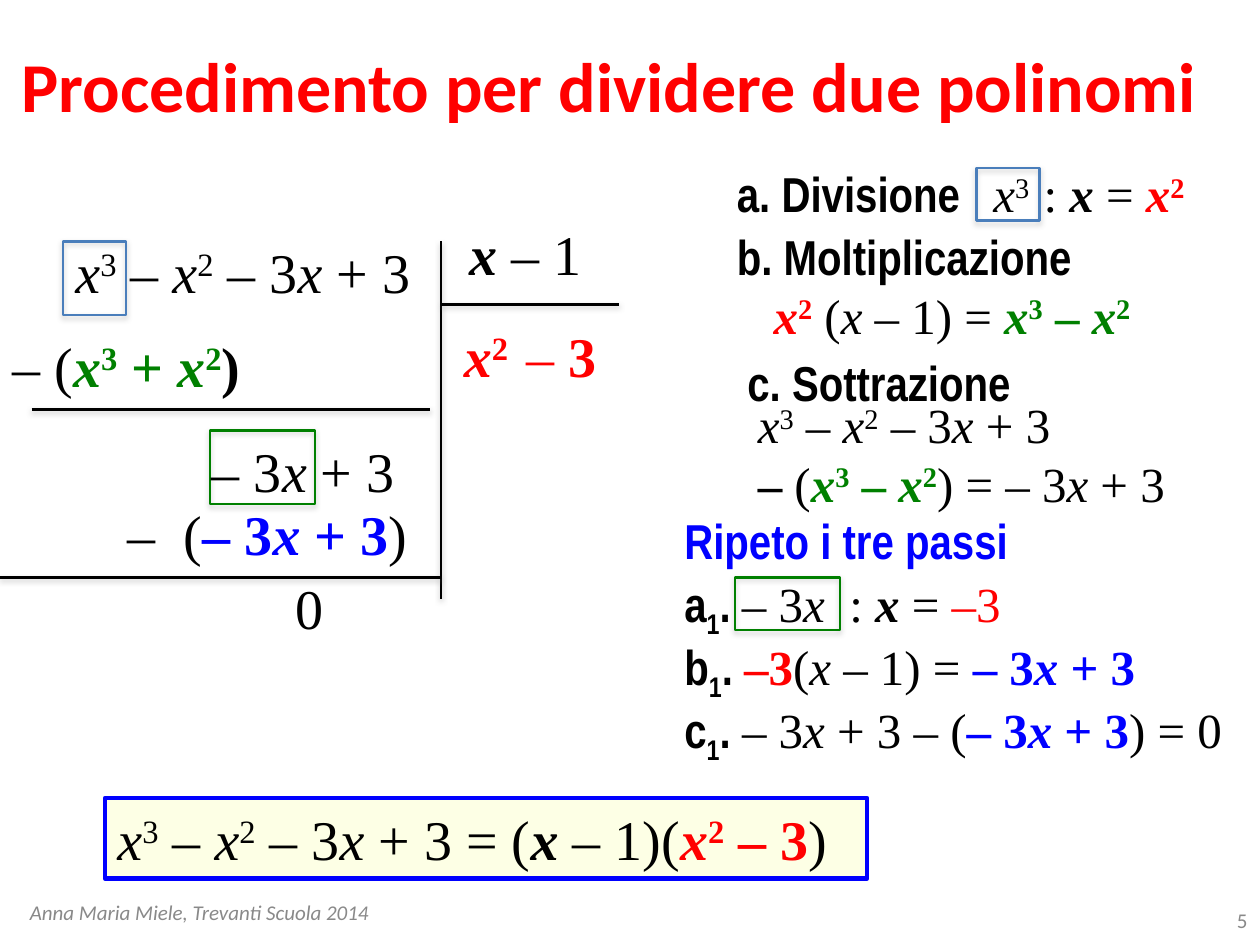
from lxml import etree
from pptx import Presentation
from pptx.dml.color import RGBColor
from pptx.enum.shapes import MSO_CONNECTOR, MSO_SHAPE
from pptx.enum.text import MSO_ANCHOR, PP_ALIGN
from pptx.util import Pt

RECT, LINE = MSO_SHAPE.RECTANGLE, MSO_CONNECTOR.STRAIGHT
TOP, MIDDLE = MSO_ANCHOR.TOP, MSO_ANCHOR.MIDDLE
LEFT, CENTER, RIGHT = PP_ALIGN.LEFT, PP_ALIGN.CENTER, PP_ALIGN.RIGHT
NS = "http://schemas.openxmlformats.org/drawingml/2006/main"
COLORS = {"R": "FF0000", "G": "008000", "B": "0000FF"}
rgb = RGBColor.from_string


def fill_math(frame, size, *rows):
    """Write rows of (text, flags): x is italic, ^ raises and _ lowers a sign.

    Flags: b bold, n narrow, R red, G green, B blue.
    """
    for n, row in enumerate(rows):
        para = frame.paragraphs[0] if n == 0 else frame.add_paragraph()
        for text, flags in row:
            for mark in ("x", "^2", "^3", "^ ", "_1"):
                text = text.replace(mark, f"|{mark}|")
            for part in filter(None, text.split("|")):
                run = para.add_run()
                run.text = part.lstrip("^_")
                font = run.font
                font.size = Pt(size)
                font.name = "Arial Narrow" if "n" in flags else "Times New Roman"
                font.bold = "b" in flags
                font.italic = part == "x"
                hue = [COLORS[f] for f in flags if f in COLORS]
                font.color.rgb = rgb(hue[0] if hue else "000000")
                if part[0] in "^_":
                    base = "30000" if part[0] == "^" else "-25000"
                    font._element.set("baseline", base)


def outline(shape, color, alpha, dist):
    """Give a thin line and a soft grey shadow below."""
    shape.line.color.rgb = rgb(color)
    shape.line.width = Pt(1.5)
    shape._element.spPr.append(etree.fromstring(
        f'<a:effectLst xmlns:a="{NS}"><a:outerShdw blurRad="{Pt(3.1)}" '
        f'dist="{Pt(dist)}" dir="5400000" rotWithShape="0">'
        f'<a:srgbClr val="808080"><a:alpha val="{alpha}000"/></a:srgbClr>'
        "</a:outerShdw></a:effectLst>"))


prs = Presentation()
prs.slide_width, prs.slide_height = Pt(720), Pt(540)
slide = prs.slides.add_slide(prs.slide_layouts[0])
shapes = slide.shapes

# Title
title = shapes.title
sub = slide.placeholders[1]._element
sub.getparent().remove(sub)
title.left, title.top, title.width, title.height = Pt(0), Pt(20.5), Pt(696), Pt(52)
title.text_frame.text = "Procedimento per dividere due polinomi"
title.text_frame.vertical_anchor = TOP
para = title.text_frame.paragraphs[0]
para.alignment = CENTER
font = para.runs[0].font
font.name, font.size, font.bold = "Calibri", Pt(40), True
font.color.rgb = rgb("FF0000")

# Footer and page number
for text, spot, align, slant in [
    ("Anna Maria Miele, Trevanti Scuola 2014", (0, 502.5, 228, 37.5), CENTER, True),
    ("5", (672, 511, 48, 29), RIGHT, False),
]:
    frame = shapes.add_textbox(*map(Pt, spot)).text_frame
    frame.word_wrap = True
    frame.vertical_anchor = MIDDLE
    frame.text = text
    para = frame.paragraphs[0]
    para.alignment = align
    font = para.runs[0].font
    font.name, font.size, font.italic = "Calibri", Pt(12), slant
    font.color.rgb = rgb("898989")

# Result
result = shapes.add_shape(RECT, Pt(60), Pt(456), Pt(435.5), Pt(46))
result.shadow.inherit = False
result.fill.solid()
result.fill.fore_color.rgb = rgb("FDFFE5")
result.line.color.rgb = rgb("0000FF")
result.line.width = Pt(2.5)
result.text_frame.vertical_anchor = TOP
result.text_frame.paragraphs[0].alignment = LEFT
fill_math(result.text_frame, 32, [
    ("x^3 – x^2 – 3x + 3 = (", ""), ("x", "b"), (" – 1)(", ""),
    ("x^2 – 3", "bR"), (")", "")])

# Rules of the long division
for x1, y1, x2, y2 in [
    (252, 138, 252, 342), (252, 174, 354, 174),
    (18, 234, 246, 234), (0, 330, 252, 330),
]:
    rule = shapes.add_connector(LINE, Pt(x1), Pt(y1), Pt(x2), Pt(y2))
    outline(rule, "000000", 38, 1.6)

# Frames around the terms to divide
for left, top, width, height, color in [
    (36, 138, 36, 42, "4A7EBB"), (558, 96, 36, 30, "4A7EBB"),
    (120, 246, 60, 42, "008000"), (420, 330, 60, 30, "008000"),
]:
    box = shapes.add_shape(RECT, Pt(left), Pt(top), Pt(width), Pt(height))
    box.fill.background()
    outline(box, color, 35, 1.8)

# Long division on the left (32 pt), steps on the right (28 pt)
division = [
    (36, 132, 216, [("x^3 – x^2 – 3x + 3", "")]),
    (261, 122, 84, [("x", "b"), (" – 1", "")]),
    (258, 180, 46, [("x^2", "bR")]),
    (294, 180, 58, [("–", "R"), (" 3", "bR")]),
    (0, 186, 152, [("– (", ""), ("x^3 + x^2", "bG"), (")", "b")]),
    (114, 246, 120, [("– 3x + 3", "")]),
    (66, 282, 178, [("–  (", ""), ("– 3x + 3", "bB"), (")", "")]),
    (162, 324, 30, [("0", "")]),
]
steps = [
    (414, 90, 286, [("a. Divisione   ", "bn"), ("x^3^ ^ : ", ""),
                    ("x ", "b"), ("= ", ""), ("x^2", "bR")]),
    (414, 126, 262, [("b. Moltiplicazione", "bn")],
     [("   x^2", "bR"), (" (x – 1) = ", ""), ("x^3 – x^2", "bG")]),
    (420, 198, 170, [("c. Sottrazione", "bn")]),
    (426, 222, 258, [("x^3 – x^2 – 3x + 3", "")],
     [("–", "b"), (" (", ""), ("x^3 – x^2", "bG"), (") = – 3x + 3", "")]),
    (384, 288, 216, [("Ripeto i tre passi", "bnB")]),
    (384, 324, 202, [("a_1. ", "bn"), ("– 3x  : ", ""), ("x", "b"),
                     (" = ", ""), ("–3", "R")]),
    (384, 360, 294, [("b_1. ", "bn"), ("–3", "bR"), ("(x – 1) = ", ""),
                     ("– 3x + 3", "bB")]),
    (384, 396, 336, [("c_1. ", "bn"), ("– 3x + 3 – (", ""),
                     ("– 3x + 3", "bB"), (") = 0", "")]),
]
for size, items in ((32, division), (28, steps)):
    for left, top, width, *rows in items:
        height = 7.2 + 1.2 * size * len(rows)
        note = shapes.add_textbox(Pt(left), Pt(top), Pt(width), Pt(height))
        note.text_frame.word_wrap = True
        fill_math(note.text_frame, size, *rows)

prs.save("out.pptx")
